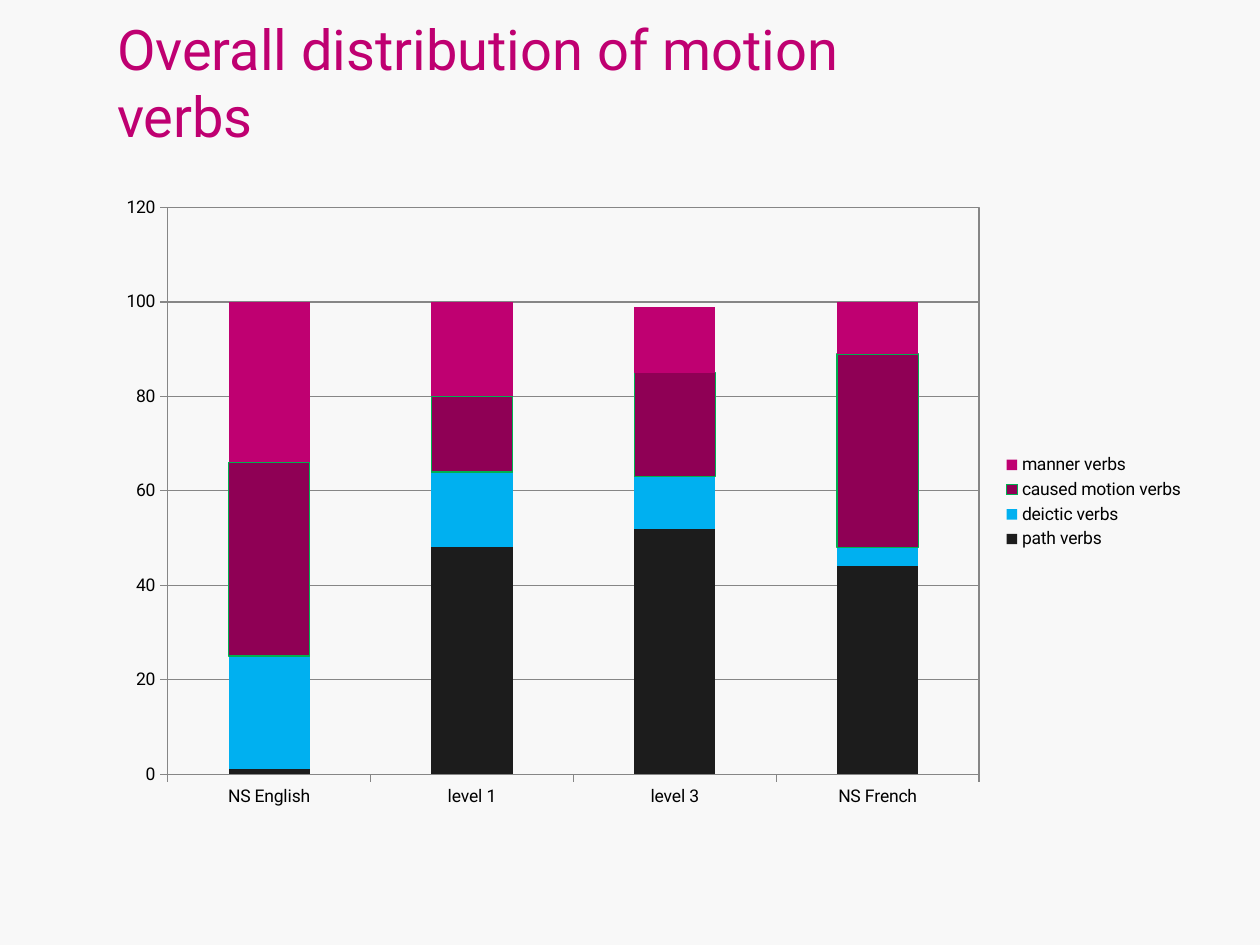
from lxml import etree
from pptx import Presentation
from pptx.chart.data import CategoryChartData
from pptx.dml.color import RGBColor
from pptx.enum.chart import XL_CHART_TYPE, XL_LEGEND_POSITION, XL_TICK_MARK
from pptx.enum.text import MSO_ANCHOR
from pptx.oxml import parse_xml
from pptx.oxml.ns import nsdecls
from pptx.util import Cm, Pt

STACKED = XL_CHART_TYPE.COLUMN_STACKED
RIGHT = XL_LEGEND_POSITION.RIGHT
OUTSIDE = XL_TICK_MARK.OUTSIDE
BOTTOM = MSO_ANCHOR.BOTTOM
FONT = "Roboto"
COLORS = {
    "background": "F8F8F8",
    "title": "BF0071",
    "text": "000000",
    "grid": "868686",
    "outline": "00B050",
    "path verbs": "1C1C1C",
    "deictic verbs": "00B0F0",
    "caused motion verbs": "8F0055",
    "manner verbs": "BF0071",
}
CATEGORIES = ["NS English", "level 1", "level 3", "NS French"]
SERIES = {
    "path verbs": (1, 48, 52, 44),
    "deictic verbs": (24, 16, 11, 4),
    "caused motion verbs": (41, 16, 22, 41),
    "manner verbs": (34, 20, 14, 11),
}


def rgb(name):
    """Return the named colour."""
    return RGBColor.from_string(COLORS[name])


def style_font(font, size, color):
    """Set the typeface, size and colour of a font."""
    font.name = FONT
    font.size = Pt(size)
    font.color.rgb = rgb(color)


def style_line(line, color):
    """Set the colour and width of a line."""
    line.color.rgb = rgb(color)
    line.width = Pt(0.75)


def add_title(s, text):
    """Add the slide title, resting on the bottom of its box."""
    tf = s.shapes.add_textbox(Cm(2.11), Cm(0.76), Cm(17.2), Cm(2.36)).text_frame
    tf.word_wrap = True
    tf.vertical_anchor = BOTTOM
    tf.text = text
    style_font(tf.paragraphs[0].runs[0].font, 32, "title")


def frame_plot(chart):
    """Draw a thin border around the plot area."""
    plot_area = chart.plots[0]._element.getparent()
    sp_pr = parse_xml(f'<c:spPr {nsdecls("c", "a")}><a:noFill/></c:spPr>')
    ln = etree.SubElement(sp_pr, sp_pr[0].tag.replace("noFill", "ln"), w="9525")
    fill = etree.SubElement(ln, ln.tag.replace("}ln", "}solidFill"))
    etree.SubElement(fill, ln.tag.replace("}ln", "}srgbClr"), val=COLORS["grid"])
    plot_area.append(sp_pr)


def style_axes(chart):
    """Set the scale, ticks and grid lines of both axes."""
    for axis in (chart.category_axis, chart.value_axis):
        axis.major_tick_mark = OUTSIDE
        style_line(axis.format.line, "grid")
    axis = chart.value_axis
    axis.minimum_scale, axis.maximum_scale, axis.major_unit = 0, 120, 20
    axis.has_major_gridlines = True
    style_line(axis.major_gridlines.format.line, "grid")


def add_verb_chart(s):
    """Add the stacked column chart of verb types."""
    data = CategoryChartData()
    data.categories = CATEGORIES
    for name, values in SERIES.items():
        data.add_series(name, values)
    chart = s.shapes.add_chart(
        STACKED, Cm(2.11), Cm(3.73), Cm(22.02), Cm(12.78), data
    ).chart
    style_font(chart.font, 10, "text")
    chart.has_title = False
    chart.has_legend = True
    chart.legend.position = RIGHT
    chart.legend.include_in_layout = False
    plot = chart.plots[0]
    plot.vary_by_categories = False
    plot.gap_width, plot.overlap = 150, 100
    for series in plot.series:
        series.format.fill.solid()
        series.format.fill.fore_color.rgb = rgb(series.name)
        if series.name == "caused motion verbs":
            style_line(series.format.line, "outline")
    style_axes(chart)
    frame_plot(chart)


def main():
    """Build the slide and save it."""
    prs = Presentation()
    prs.slide_width, prs.slide_height = Cm(25.4), Cm(19.05)
    s = prs.slides.add_slide(prs.slide_layouts[6])
    s.background.fill.solid()
    s.background.fill.fore_color.rgb = rgb("background")
    add_title(s, "Overall distribution of motion verbs")
    add_verb_chart(s)
    prs.save("out.pptx")


if __name__ == "__main__":
    main()
